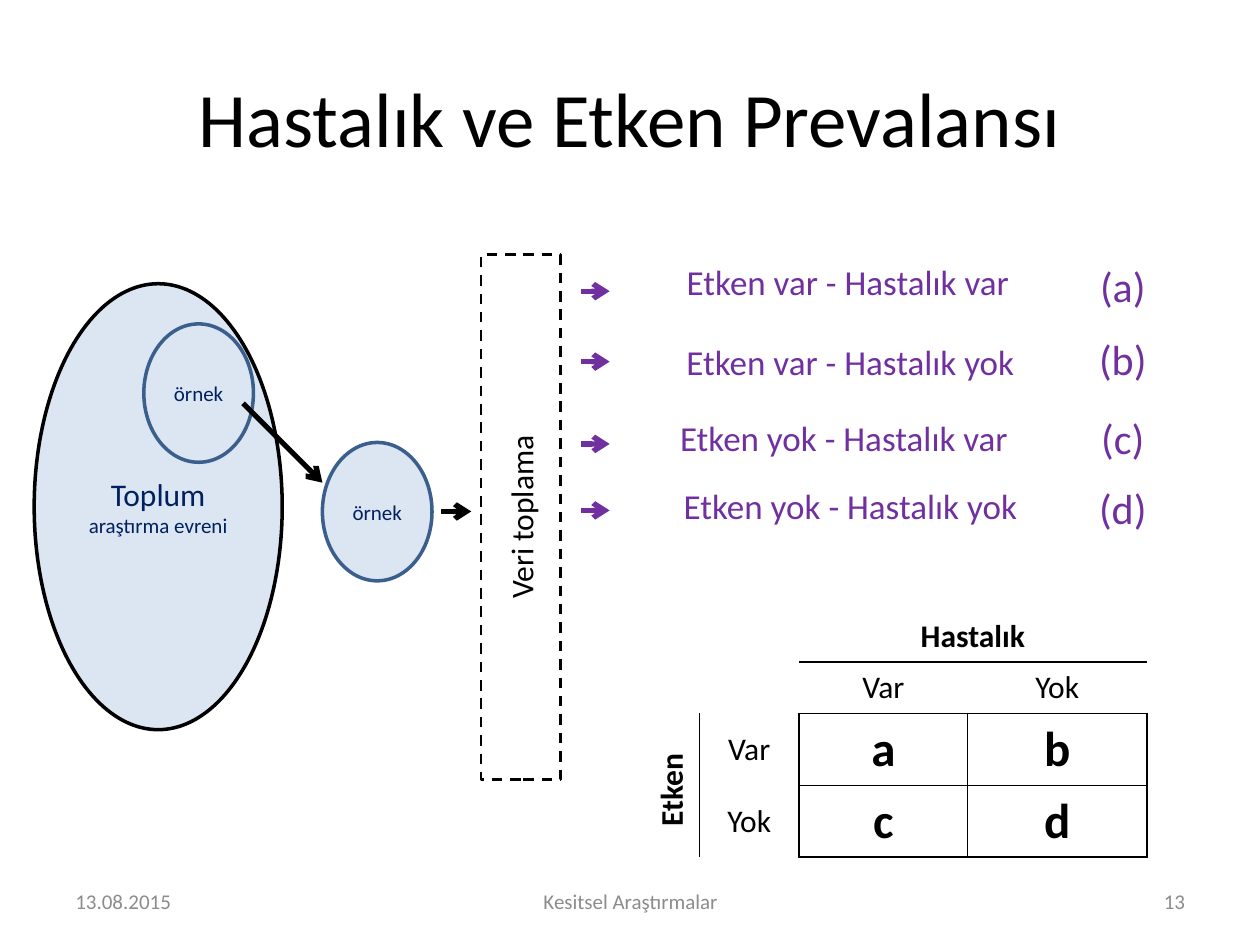
import pptx
import pptx.util
import pptx.dml.color
import pptx.enum.dml
import pptx.enum.shapes
import pptx.enum.text
import pptx.oxml
import pptx.oxml.ns
import lxml.etree

Cm = pptx.util.Cm
Pt = pptx.util.Pt
OVAL = pptx.enum.shapes.MSO_SHAPE.OVAL
RECTANGLE = pptx.enum.shapes.MSO_SHAPE.RECTANGLE
ALIGN = {"l": pptx.enum.text.PP_ALIGN.LEFT,
         "c": pptx.enum.text.PP_ALIGN.CENTER,
         "r": pptx.enum.text.PP_ALIGN.RIGHT}
ANCHOR = {"t": pptx.enum.text.MSO_ANCHOR.TOP,
          "m": pptx.enum.text.MSO_ANCHOR.MIDDLE}

BLACK, NAVY, PURPLE, GREY = "000000", "002060", "7030A0", "8C8C8C"
PALE, STEEL = "DCE6F2", "3A5F8C"

TITLE = "Hastalık ve Etken Prevalansı"
FOOTER = [
    ("13.08.2015", 1.27, 5.93, "l"),
    ("Kesitsel Araştırmalar", 8.69, 8.05, "c"),
    ("13", 18.21, 5.93, "r"),
]
POPULATIONS = [
    ([("Toplum ", 18), ("araştırma evreni", 12)], (0.69, 5.72, 5, 8.99), BLACK),
    ([("örnek", 12)], (2.9, 6.53, 2.21, 2.79), STEEL),
    ([("örnek", 12)], (6.5, 8.92, 2.21, 2.79), STEEL),
]
SAMPLING_ARROWS = [(8.89, 10.31, 9.5, 10.31), (4.9, 8.13, 6.5, 9.73)]
OUTCOMES = [
    ("Etken var - Hastalık var", 12.5, 5.13, "(a)", 5.13, 5.87),
    ("Etken var - Hastalık yok", 12.55, 6.73, "(b)", 6.6, 7.29),
    ("Etken yok - Hastalık var", 12.42, 8.28, "(c)", 8.2, 8.95),
    ("Etken yok - Hastalık yok", 12.55, 9.65, "(d)", 9.6, 10.29),
]
COLUMNS = [1.4, 2.01, 3.4, 3.61]
ROWS = [1.03, 1.03, 1.45, 1.45]
CELLS = [
    ["", "", "Hastalık", ""],
    ["", "", "Var", "Yok"],
    ["", "Var", "a", "b"],
    ["", "Yok", "c", "d"],
]
BORDERS = [
    ["", "", "B", "B"],
    ["", "B" * 0, "TB", "TB"],
    ["R", "LR", "LRTB", "LRTB"],
    ["R", "LR", "LRTB", "LRTB"],
]


def colour(value):
    return pptx.dml.color.RGBColor.from_string(value)


def write(frame, text, size=18, color=BLACK, bold=False, align="c", anchor="t"):
    frame.word_wrap = True
    frame.vertical_anchor = ANCHOR[anchor]
    paragraph = frame.paragraphs[0]
    paragraph.alignment = ALIGN[align]
    for words, points in [(text, size)] if isinstance(text, str) else text:
        run = paragraph.add_run()
        run.text = words
        run.font.name = "Calibri"
        run.font.size = Pt(points)
        run.font.bold = bold
        run.font.color.rgb = colour(color)


def add_label(text, x, y, width, height, **style):
    label = slide.shapes.add_textbox(Cm(x), Cm(y), Cm(width), Cm(height))
    write(label.text_frame, text, **style)
    return label


def add_outline(preset, place, line, width, fill=None):
    shape = slide.shapes.add_shape(preset, *map(Cm, place))
    shape.shadow.inherit = False
    if fill:
        shape.fill.solid()
        shape.fill.fore_color.rgb = colour(fill)
    else:
        shape.fill.background()
    shape.line.color.rgb = colour(line)
    shape.line.width = Pt(width)
    return shape


def add_arrow(ends, color):
    arrow = slide.shapes.add_connector(
        pptx.enum.shapes.MSO_CONNECTOR.STRAIGHT, *map(Cm, ends))
    arrow.line.color.rgb = colour(color)
    arrow.line.width = Pt(3)
    qn = pptx.oxml.ns.qn
    lxml.etree.SubElement(arrow.line._get_or_add_ln(), qn("a:tailEnd"), type="arrow")
    lxml.etree.SubElement(arrow._element.spPr, qn("a:effectLst"))


def set_borders(cell, sides):
    properties = cell._tc.get_or_add_tcPr()
    for position, side in enumerate("LRTB"):
        paint = ('<a:solidFill><a:srgbClr val="%s"/></a:solidFill>' % BLACK
                 if side in sides else "<a:noFill/>")
        properties.insert(position, pptx.oxml.parse_xml(
            '<a:ln%s %s w="12700">%s</a:ln%s>'
            % (side, pptx.oxml.ns.nsdecls("a"), paint, side)))


deck = pptx.Presentation()
deck.slide_width, deck.slide_height = Cm(25.4), Cm(19.05)
slide = deck.slides.add_slide(deck.slide_layouts[5])

title = slide.shapes.title
title.left, title.top, title.width, title.height = map(Cm, (1.27, 0.76, 22.86, 3.18))
write(title.text_frame, TITLE, size=44, anchor="m")

for text, x, width, align in FOOTER:
    add_label(text, x, 17.65, width, 1.02, size=12, color=GREY, align=align, anchor="m")

for text, place, line in POPULATIONS:
    population = add_outline(OVAL, place, line, 2, PALE)
    write(population.text_frame, text, color=NAVY, anchor="m")

collection = add_outline(RECTANGLE, (9.7, 5.13, 1.6, 10.59), BLACK, 1.5)
collection.line.dash_style = pptx.enum.dml.MSO_LINE.DASH
write(collection.text_frame, "Veri toplama", anchor="m")
collection._element.txBody.bodyPr.set("vert", "vert270")

for ends in SAMPLING_ARROWS:
    add_arrow(ends, BLACK)

for outcome, x, y, letter, letter_y, arrow_y in OUTCOMES:
    add_arrow((11.71, arrow_y, 12.29, arrow_y), PURPLE)
    add_label(outcome, x, y, 9.19, 1.12, size=20, color=PURPLE)
    add_label(letter, 21.77, letter_y, 1.73, 1.3, size=24, color=PURPLE)

crosstab = slide.shapes.add_table(
    len(ROWS), len(COLUMNS), Cm(12.7), Cm(12.32),
    Cm(sum(COLUMNS)), Cm(sum(ROWS))).table
crosstab.first_row = crosstab.horz_banding = False
for column, width in zip(crosstab.columns, COLUMNS):
    column.width = Cm(width)
for row, height in zip(crosstab.rows, ROWS):
    row.height = Cm(height)
crosstab.cell(0, 2).merge(crosstab.cell(0, 3))
crosstab.cell(2, 0).merge(crosstab.cell(3, 0))
for r, words in enumerate(CELLS):
    for c, word in enumerate(words):
        cell = crosstab.cell(r, c)
        cell.fill.background()
        set_borders(cell, BORDERS[r][c])
        if word:
            count = r > 1 and c > 1
            write(cell.text_frame, word, size=28 if count else 18,
                  bold=count or r == 0)
            cell.vertical_anchor = ANCHOR["m" if c == 1 else "t"]

factor = add_label("Etken", 12.12, 15.42, 2.79, 1.02, bold=True)
factor.rotation = 270

deck.save("out.pptx")
